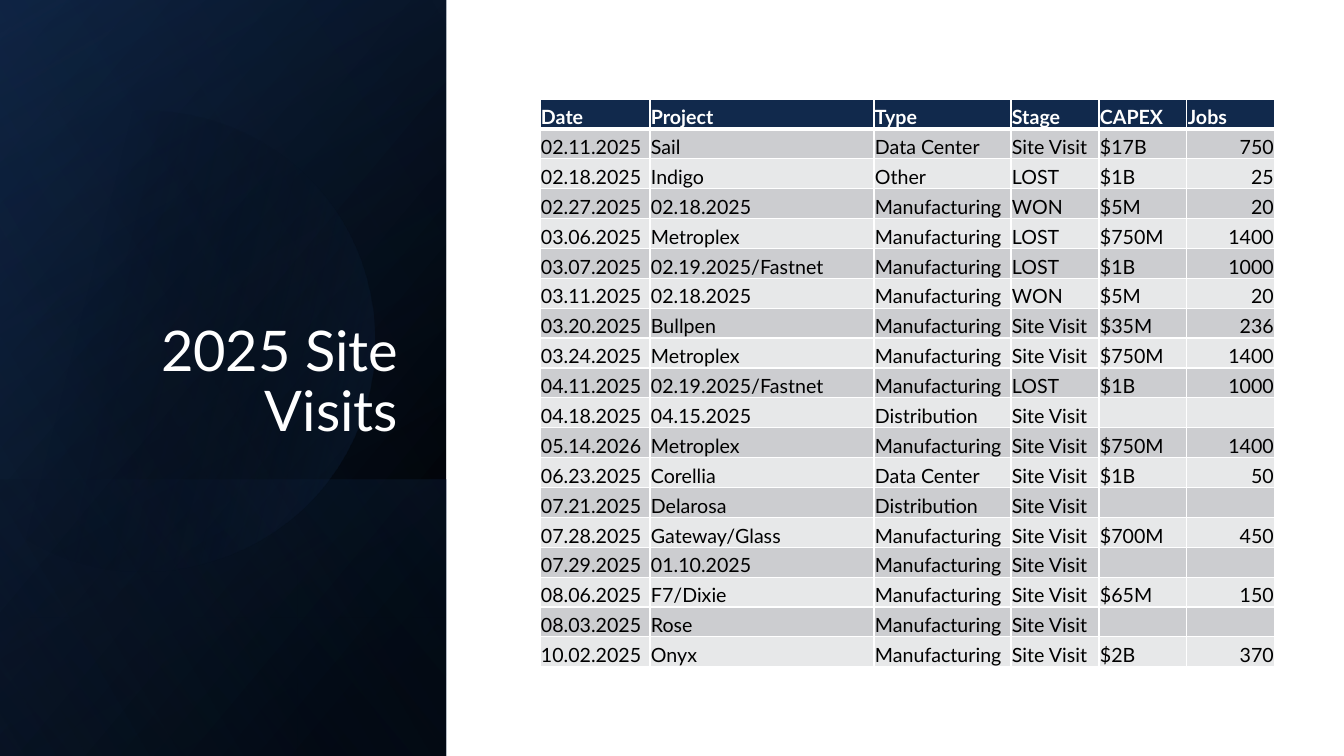
from lxml import etree
from pptx import Presentation
from pptx.dml.color import RGBColor
from pptx.enum.shapes import MSO_SHAPE
from pptx.enum.text import MSO_ANCHOR, PP_ALIGN
from pptx.oxml import parse_xml
from pptx.oxml.ns import nsdecls, qn
from pptx.util import Pt

PX = 914400 / 100.8
FONT = "Lato"
RECT = MSO_SHAPE.RECTANGLE
BOTTOM = MSO_ANCHOR.BOTTOM
LEFT, RIGHT = PP_ALIGN.LEFT, PP_ALIGN.RIGHT

WHITE = RGBColor(0xFF, 0xFF, 0xFF)
BLACK = RGBColor(0x00, 0x00, 0x00)
NAVY = RGBColor(0x11, 0x29, 0x4C)
DEEP = RGBColor(0x0D, 0x1F, 0x39)
BLUE = RGBColor(0x33, 0x73, 0xD1)
DARK = RGBColor(0xCC, 0xCD, 0xD0)
PALE = RGBColor(0xE7, 0xE8, 0xE9)

# Panel layers: box, gradient stops (position, colour, opacity), angle
FULL = (-155, 155, 756, 446)
FOOT = (85, 395, 276, 446)
BASE = [
    (FULL, [(8, BLACK, 100), (100, DEEP, 100)], 50),
    (FULL, [(0, BLACK, 0), (99, NAVY, 46)], 30),
    (FOOT, [(2, NAVY, 29), (100, BLACK, 30)], 130),
]
GLOW = (FULL, [(0, BLACK, 0), (99, BLUE, 11)], 120)

# Disc outline: a single point is a line, three points are a curve
START = (150, 111)
DISC = [
    [(248, 113), (338, 178), (366, 277)],
    [(401, 401), (331, 527), (209, 562)],
    [(132, 585), (53, 566), (-3, 518)],
    [(-15, 507)],
    [(-15, 176)],
    [(0, 162)],
    [(23, 143), (50, 129), (81, 120)],
    [(104, 114), (127, 111), START],
]
STEPS = 20

COLS = [110, 224, 137, 88, 88, 88]
MAKE, DATA, DIST = "Manufacturing", "Data Center", "Distribution"
VISIT, WON, LOST = "Site Visit", "WON", "LOST"
ROWS = [
    ("Date", "Project", "Type", "Stage", "CAPEX", "Jobs"),
    ("02.11.2025", "Sail", DATA, VISIT, "$17B", "750"),
    ("02.18.2025", "Indigo", "Other", LOST, "$1B", "25"),
    ("02.27.2025", "02.18.2025", MAKE, WON, "$5M", "20"),
    ("03.06.2025", "Metroplex", MAKE, LOST, "$750M", "1400"),
    ("03.07.2025", "02.19.2025/Fastnet", MAKE, LOST, "$1B", "1000"),
    ("03.11.2025", "02.18.2025", MAKE, WON, "$5M", "20"),
    ("03.20.2025", "Bullpen", MAKE, VISIT, "$35M", "236"),
    ("03.24.2025", "Metroplex", MAKE, VISIT, "$750M", "1400"),
    ("04.11.2025", "02.19.2025/Fastnet", MAKE, LOST, "$1B", "1000"),
    ("04.18.2025", "04.15.2025", DIST, VISIT, "", ""),
    ("05.14.2026", "Metroplex", MAKE, VISIT, "$750M", "1400"),
    ("06.23.2025", "Corellia", DATA, VISIT, "$1B", "50"),
    ("07.21.2025", "Delarosa", DIST, VISIT, "", ""),
    ("07.28.2025", "Gateway/Glass", MAKE, VISIT, "$700M", "450"),
    ("07.29.2025", "01.10.2025", MAKE, VISIT, "", ""),
    ("08.06.2025", "F7/Dixie", MAKE, VISIT, "$65M", "150"),
    ("08.03.2025", "Rose", MAKE, VISIT, "", ""),
    ("10.02.2025", "Onyx", MAKE, VISIT, "$2B", "370"),
]


def px(*nums):
    return [round(n * PX) for n in nums]


def style(item, values):
    for name, value in values.items():
        setattr(item, name, value)


def write(para, text, size, color, bold=False):
    run = para.add_run()
    run.text = text
    style(run.font, {"name": FONT, "size": Pt(size), "bold": bold})
    run.font.color.rgb = color


def blend(shape, stops, angle):
    """Fill a shape with a linear gradient and drop its line and shadow."""
    shape.shadow.inherit = False
    shape.line.fill.background()
    shape.fill.background()
    marks = "".join(
        f'<a:gs pos="{pos * 1000}"><a:srgbClr val="{color}">'
        f'<a:alpha val="{alpha * 1000}"/></a:srgbClr></a:gs>'
        for pos, color, alpha in stops)
    grad = parse_xml(
        f'<a:gradFill {nsdecls("a")} rotWithShape="1"><a:gsLst>{marks}</a:gsLst>'
        f'<a:lin ang="{angle * 60000}" scaled="0"/></a:gradFill>')
    props = shape.element.spPr
    props.replace(props.find(qn("a:noFill")), grad)


def layer(slide, box, stops, angle):
    shape = slide.shapes.add_shape(RECT, *px(*box))
    shape.rotation = 90
    shape.element.spPr.find(qn("a:xfrm")).set("flipH", "1")
    blend(shape, stops, angle)


def curve(start, one, two, end):
    for step in range(1, STEPS + 1):
        t = step / STEPS
        u = 1 - t
        yield tuple(u**3 * a + 3 * u * u * t * b + 3 * u * t * t * c + t**3 * d
                    for a, b, c, d in zip(start, one, two, end))


def disc(slide):
    spots, last = [], START
    for part in DISC:
        spots += curve(last, *part) if len(part) == 3 else part
        last = part[-1]
    path = slide.shapes.build_freeform(*px(*START), scale=1.0)
    path.add_line_segments([px(*spot) for spot in spots], close=True)
    blend(path.convert_to_shape(), [(29, BLACK, 0), (100, NAVY, 43)], 14)


def title(slide, text, box):
    frame = slide.shapes.add_textbox(*px(*box)).text_frame
    style(frame, {"word_wrap": True, "vertical_anchor": BOTTOM})
    para = frame.paragraphs[0]
    style(para, {"alignment": RIGHT, "line_spacing": 0.9})
    write(para, text, 40, WHITE)


def edge(cell, side, width):
    line = etree.SubElement(cell._tc.get_or_add_tcPr(), qn(f"a:ln{side}"),
                            w=str(Pt(width)))
    fill = etree.SubElement(line, qn("a:solidFill"))
    etree.SubElement(fill, qn("a:srgbClr"), val=str(WHITE))


def fill_cell(cell, text, row, col):
    head = row == 0
    style(cell, {"vertical_anchor": BOTTOM, "margin_bottom": 0})
    style(cell, dict.fromkeys(("margin_left", "margin_right", "margin_top"), px(1)[0]))
    # The rule under the header is thicker
    for side in "LRTB":
        edge(cell, side, 3 if (row, side) in ((0, "B"), (1, "T")) else 1)
    cell.fill.solid()
    cell.fill.fore_color.rgb = NAVY if head else DARK if row % 2 else PALE
    para = cell.text_frame.paragraphs[0]
    para.alignment = RIGHT if col == len(COLS) - 1 and not head else LEFT
    if text:
        write(para, text, 14, WHITE if head else BLACK, head)
    else:
        para._p.get_or_add_endParaRPr().set("sz", "1400")


def grid(slide, left, top, high):
    table = slide.shapes.add_table(
        len(ROWS), len(COLS), *px(left, top, sum(COLS), high)).table
    for col, wide in zip(table.columns, px(*COLS)):
        col.width = wide
    for r, row in enumerate(ROWS):
        table.rows[r].height = px(high / len(ROWS))[0]
        for c, text in enumerate(row):
            fill_cell(table.cell(r, c), text, r, c)


def main():
    deck = Presentation()
    deck.slide_width, deck.slide_height = px(1344, 756)
    slide = deck.slides.add_slide(deck.slide_layouts[6])
    # Left panel
    for item in BASE:
        layer(slide, *item)
    disc(slide)
    layer(slide, *GLOW)
    title(slide, "2025 Site Visits", (64, 185, 344, 264))
    # Visits table
    grid(slide, 540, 99, 568)
    deck.save("out.pptx")


if __name__ == "__main__":
    main()
